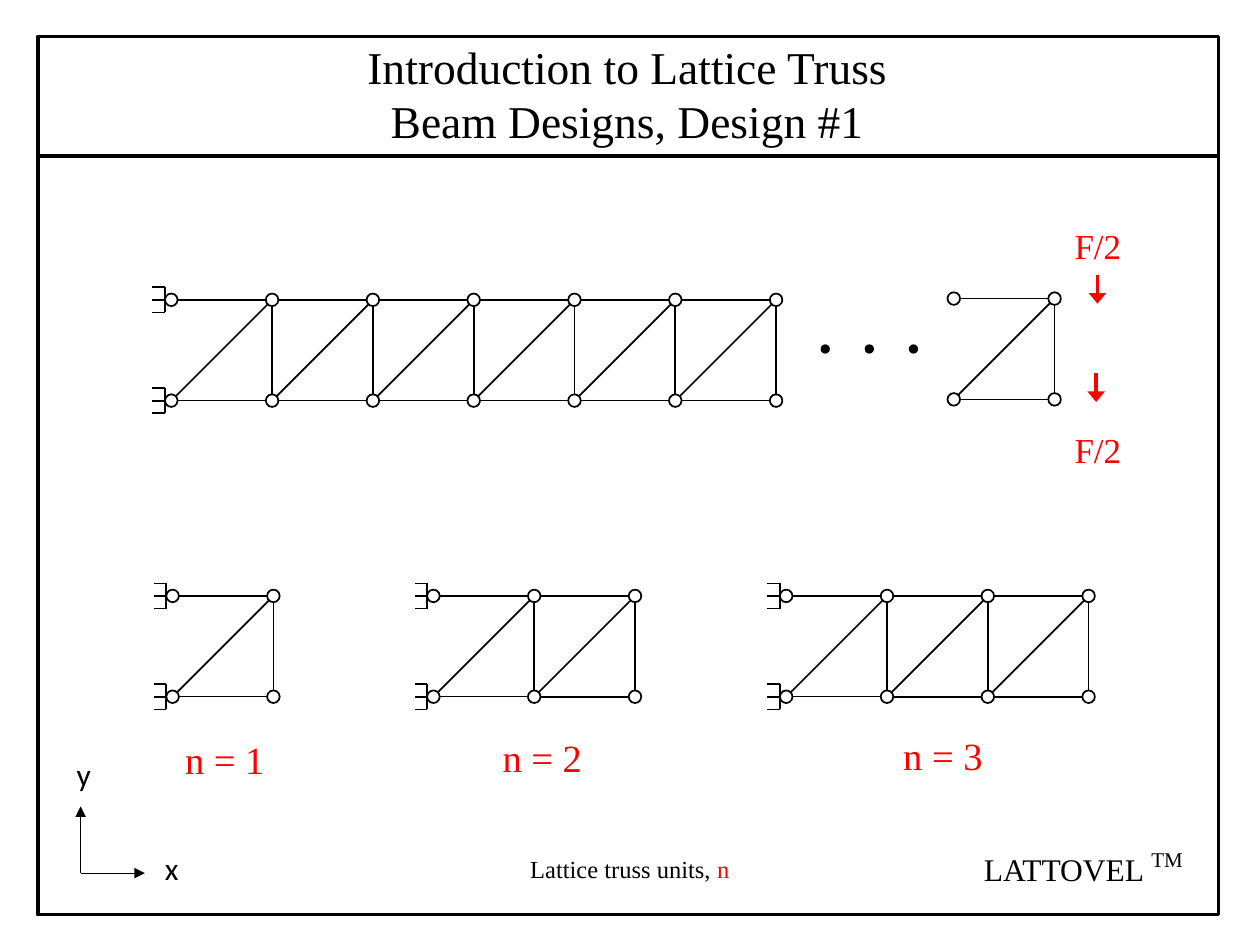
import pptx
import pptx.util
import pptx.dml.color
import pptx.enum.shapes
import pptx.enum.text
import pptx.oxml
import pptx.oxml.ns
from pptx.util import Inches

COLORS = {"ink": "000000", "paper": "FFFFFF", "accent": "FF0000"}
SERIF, SANS = "Times New Roman", "Calibri"

# Content: each truss is left, top, bays, supported at the wall
TRUSSES = [
    (1.36, 2.38, 6, True),
    (7.57, 2.37, 1, False),
    (1.37, 4.73, 1, True),
    (3.44, 4.73, 2, True),
    (6.24, 4.73, 3, True),
]
# left, top, width, height, size, font, centred, paragraphs of (text, color)
LABELS = [
    (2.63, 0.26, 4.7, 0.98, 26, SERIF, True,
     [[("Introduction to Lattice Truss", "ink")],
      [("Beam Designs, Design #1", "ink")]]),
    (8.43, 1.73, 0.7, 0.44, 20, SERIF, False, [[("F/2", "accent")]]),
    (8.43, 3.35, 0.7, 0.44, 20, SERIF, False, [[("F/2", "accent")]]),
    (1.37, 5.79, 0.88, 0.47, 22, SERIF, False, [[("n = 1", "accent")]]),
    (3.89, 5.78, 1.03, 0.47, 22, SERIF, False, [[("n = 2", "accent")]]),
    (7.07, 5.76, 0.91, 0.47, 22, SERIF, False, [[("n = 3", "accent")]]),
    (1.21, 6.69, 0.31, 0.4, 18, SANS, False, [[("x", "ink")]]),
    (0.51, 5.94, 0.31, 0.4, 18, SANS, False, [[("y", "ink")]]),
    (4.11, 6.73, 1.85, 0.34, 14, SERIF, False,
     [[("Lattice truss units, ", "ink"), ("n", "accent")]]),
    (7.71, 6.7, 1.52, 0.4, 18, SERIF, False, [[("LATTOVEL", "ink")]]),
    (9.04, 6.67, 0.51, 0.28, 12, SERIF, False, [[("TM", "ink")]]),
]
# start, end, color, width, arrowhead width
ARROWS = [
    ((8.71, 2.18), (8.71, 2.41), "accent", 2, "lg"),
    ((8.7, 2.96), (8.7, 3.19), "accent", 2, "lg"),
    ((0.64, 6.93), (1.15, 6.93), "ink", 0.5, "med"),
    ((0.64, 6.93), (0.64, 6.4), "ink", 0.5, "med"),
]
BAY, JOINT, DOT, TICK = 0.8, 0.1, 0.06, 0.1

prs = pptx.Presentation()
prs.slide_width, prs.slide_height = Inches(10), Inches(7.5)
s = prs.slides.add_slide(prs.slide_layouts[6])


def rgb(name):
    return pptx.dml.color.RGBColor.from_string(COLORS[name])


def line(start, end, color="ink", width=1, head=None):
    c = s.shapes.add_connector(pptx.enum.shapes.MSO_CONNECTOR.STRAIGHT,
                               *(Inches(v) for v in start + end))
    c.line.color.rgb = rgb(color)
    c.line.width = pptx.util.Pt(width)
    ns = pptx.oxml.ns.nsdecls("a")
    sp_pr = c._element.spPr
    if head:
        sp_pr.find(pptx.oxml.ns.qn("a:ln")).append(pptx.oxml.parse_xml(
            f'<a:tailEnd {ns} type="triangle" w="{head}"/>'))
    sp_pr.append(pptx.oxml.parse_xml(f"<a:effectLst {ns}/>"))


def outline(kind, x, y, w, h, fill=None, width=1):
    sp = s.shapes.add_shape(kind, *(Inches(v) for v in (x, y, w, h)))
    sp.shadow.inherit = False
    if fill:
        sp.fill.solid()
        sp.fill.fore_color.rgb = rgb(fill)
    else:
        sp.fill.background()
    sp.line.color.rgb = rgb("ink")
    sp.line.width = pptx.util.Pt(width)


def circle(cx, cy, size, fill):
    outline(pptx.enum.shapes.MSO_SHAPE.OVAL,
            cx - size / 2, cy - size / 2, size, size, fill)


def support(x, y):
    wall = x - JOINT / 2
    line((wall, y - TICK), (wall, y + TICK))
    for dy in (-TICK, 0, TICK):
        line((wall - TICK, y + dy), (wall, y + dy))


def truss(x, top, bays, supported):
    bottom = top + BAY
    # First bay: open at the left, thin chords
    for y in (top, bottom):
        line((x, y), (x + BAY, y), width=0.75)
        if supported:
            support(x, y)
    if bays == 1:
        line((x + BAY, top), (x + BAY, bottom), width=0.75)
    # Closed bays and diagonals
    for i in range(bays):
        left = x + i * BAY
        if i:
            outline(pptx.enum.shapes.MSO_SHAPE.RECTANGLE, left, top, BAY, BAY)
        line((left, bottom), (left + BAY, top))
    # Joints on top of the members
    for i in range(bays + 1):
        for y in (top, bottom):
            circle(x + i * BAY, y, JOINT, "paper")


def label(x, y, w, h, size, font, centred, paragraphs):
    tf = s.shapes.add_textbox(*(Inches(v) for v in (x, y, w, h))).text_frame
    tf.word_wrap = True
    for i, runs in enumerate(paragraphs):
        p = tf.add_paragraph() if i else tf.paragraphs[0]
        if centred:
            p.alignment = pptx.enum.text.PP_ALIGN.CENTER
        for text, color in runs:
            r = p.add_run()
            r.text = text
            for key, value in {"size": pptx.util.Pt(size), "name": font}.items():
                setattr(r.font, key, value)
            r.font.color.rgb = rgb(color)


# Frame and title divider
outline(pptx.enum.shapes.MSO_SHAPE.RECTANGLE, 0.3, 0.29, 9.37, 6.97, width=2)
line((0.3, 1.24), (9.67, 1.24), width=2)

# Trusses, with dots for the bays left out
for item in TRUSSES:
    truss(*item)
for i in range(3):
    circle(6.55 + 0.35 * i, 2.77, DOT, "ink")

# Loads, axes and labels
for item in ARROWS:
    line(*item)
for item in LABELS:
    label(*item)

prs.save("out.pptx")
